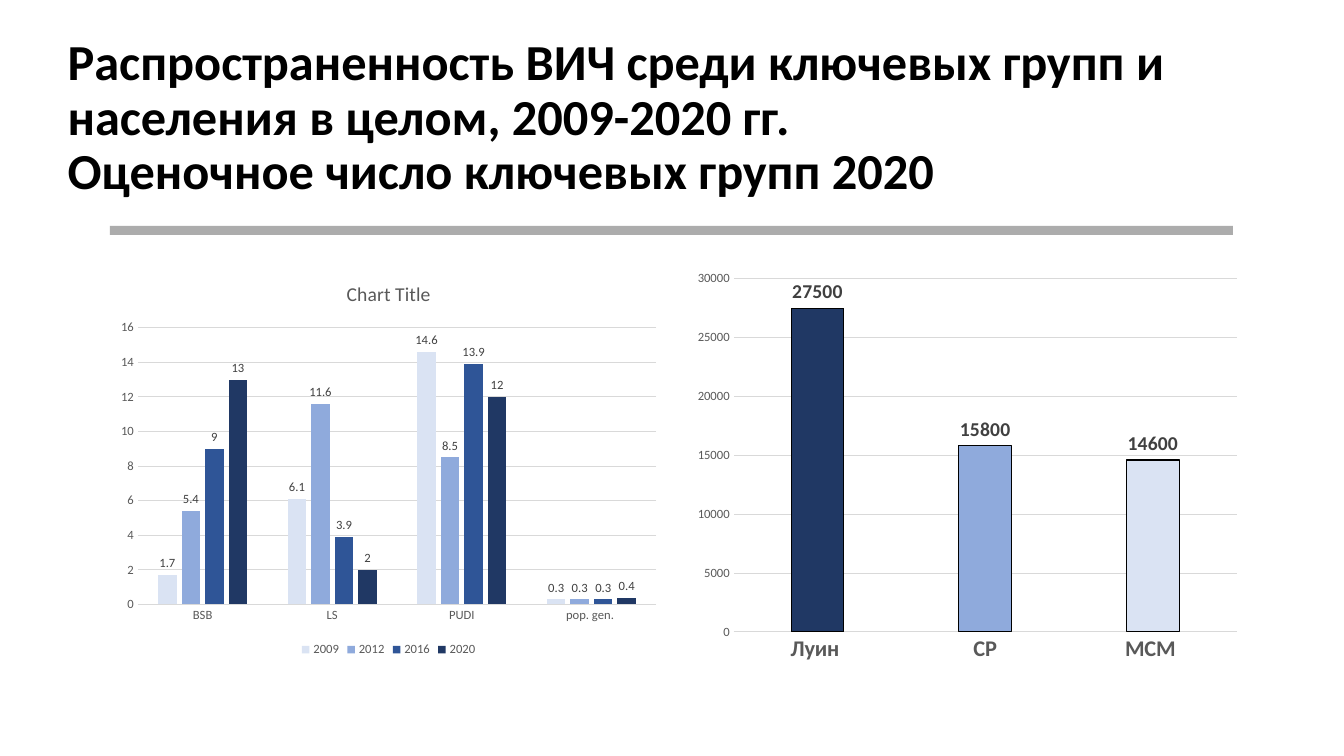
from lxml.etree import SubElement
from pptx import Presentation
from pptx.chart.data import CategoryChartData
from pptx.dml.color import RGBColor
from pptx.enum.chart import XL_CHART_TYPE as ChartType, XL_LABEL_POSITION as LabelPosition
from pptx.enum.chart import XL_LEGEND_POSITION as LegendPosition, XL_TICK_MARK as TickMark
from pptx.enum.shapes import MSO_SHAPE as Shape
from pptx.enum.text import MSO_ANCHOR as Anchor, MSO_AUTO_SIZE as AutoSize, PP_ALIGN as Align
from pptx.oxml.ns import qn
from pptx.util import Cm, Pt

FONT = "Calibri"
PALETTE = ["DAE3F3", "8FAADC", "2F5597", "203864"]
AXIS_TEXT, LABEL_TEXT, GRID = "595959", "404040", "D9D9D9"


def color(value):
    return RGBColor.from_string(value)


def style_font(font, size, value, bold=False):
    font.name = FONT
    font.size = Pt(size)
    font.bold = bold
    font.color.rgb = color(value)


def fill_solid(fill, value):
    fill.solid()
    fill.fore_color.rgb = color(value)


def style_line(line, value):
    line.color.rgb = color(value)
    line.width = Pt(0.75)


def add_title(slide, left, top, width, height):
    title = slide.shapes.title
    title.left, title.top, title.width, title.height = left, top, width, height
    frame = title.text_frame
    frame.text = (
        "Распространенность ВИЧ среди ключевых групп и населения в целом, "
        "2009-2020 гг. \vОценочное число ключевых групп 2020"
    )
    frame.word_wrap = True
    frame.auto_size = AutoSize.NONE
    frame.vertical_anchor = Anchor.MIDDLE
    paragraph = frame.paragraphs[0]
    paragraph.alignment = Align.LEFT
    paragraph.line_spacing = 0.9
    style_font(paragraph.font, 36, "000000", True)


def add_divider(slide, left, top, width, height):
    divider = slide.shapes.add_shape(Shape.RECTANGLE, left, top, width, height)
    divider.shadow.inherit = False
    divider.line.fill.background()
    fill_solid(divider.fill, "808080")
    fill_color = divider.fill._xPr.find(qn("a:solidFill"))[0]
    SubElement(fill_color, qn("a:alpha"), val="65000")


def add_columns(slide, box, categories, series, maximum, step,
                category_size=9, label_size=9, bold=False):
    data = CategoryChartData()
    data.categories = categories
    for name, values in series.items():
        data.add_series(name, values)
    chart = slide.shapes.add_chart(ChartType.COLUMN_CLUSTERED, *box, data).chart
    style_font(chart.font, 10, "000000")
    chart.has_title = False
    chart.has_legend = False

    category_axis, value_axis = chart.category_axis, chart.value_axis
    for axis in (category_axis, value_axis):
        axis.major_tick_mark = axis.minor_tick_mark = TickMark.NONE
    style_font(category_axis.tick_labels.font, category_size, AXIS_TEXT, bold)
    style_line(category_axis.format.line, GRID)
    style_font(value_axis.tick_labels.font, 9, AXIS_TEXT)
    value_axis.format.line.fill.background()
    style_line(value_axis.major_gridlines.format.line, GRID)
    value_axis.minimum_scale = 0
    value_axis.maximum_scale = maximum
    value_axis.major_unit = step

    plot = chart.plots[0]
    plot.gap_width = 219
    plot.overlap = -27
    plot.vary_by_categories = False
    plot.has_data_labels = True
    labels = plot.data_labels
    labels.show_value = True
    labels.position = LabelPosition.OUTSIDE_END
    style_font(labels.font, label_size, LABEL_TEXT, bold)
    return chart


def add_prevalence_chart(slide, *box):
    series = {
        "2009": (1.7, 6.1, 14.6, 0.3),
        "2012": (5.4, 11.6, 8.5, 0.3),
        "2016": (9, 3.9, 13.9, 0.3),
        "2020": (13, 2, 12, 0.4),
    }
    chart = add_columns(slide, box, ["BSB", "LS", "PUDI", "pop. gen. "], series, 16, 2)
    for columns, value in zip(chart.plots[0].series, PALETTE):
        fill_solid(columns.format.fill, value)
    chart.has_title = True
    chart.chart_title.include_in_layout = False
    frame = chart.chart_title.text_frame
    frame.text = "Chart Title"
    style_font(frame.paragraphs[0].font, 14, AXIS_TEXT)
    chart.has_legend = True
    chart.legend.position = LegendPosition.BOTTOM
    chart.legend.include_in_layout = False
    style_font(chart.legend.font, 9, AXIS_TEXT)


def add_population_chart(slide, *box):
    series = {"Series 1": (27500, 15800, 14600)}
    chart = add_columns(slide, box, ["Луин ", "CP", "MCM "], series, 30000, 5000, 16, 14, True)
    columns = chart.plots[0].series[0]
    fill_solid(columns.format.fill, PALETTE[3])
    style_line(columns.format.line, "000000")
    for index, value in enumerate((PALETTE[3], PALETTE[1], PALETTE[0])):
        point = columns.points[index]
        fill_solid(point.format.fill, value)
        style_line(point.format.line, "000000")


def main():
    presentation = Presentation()
    presentation.slide_width = Cm(33.87)
    presentation.slide_height = Cm(19.05)
    slide = presentation.slides.add_slide(presentation.slide_layouts[5])
    add_title(slide, Cm(1.45), Cm(0.64), Cm(30), Cm(4.72))
    add_divider(slide, Cm(2.77), Cm(5.69), Cm(28.3), Cm(0.23))
    add_prevalence_chart(slide, Cm(2.77), Cm(6.63), Cm(14.05), Cm(10.03))
    add_population_chart(slide, Cm(17.3), Cm(6.63), Cm(14.15), Cm(10.29))
    presentation.save("out.pptx")


if __name__ == "__main__":
    main()
